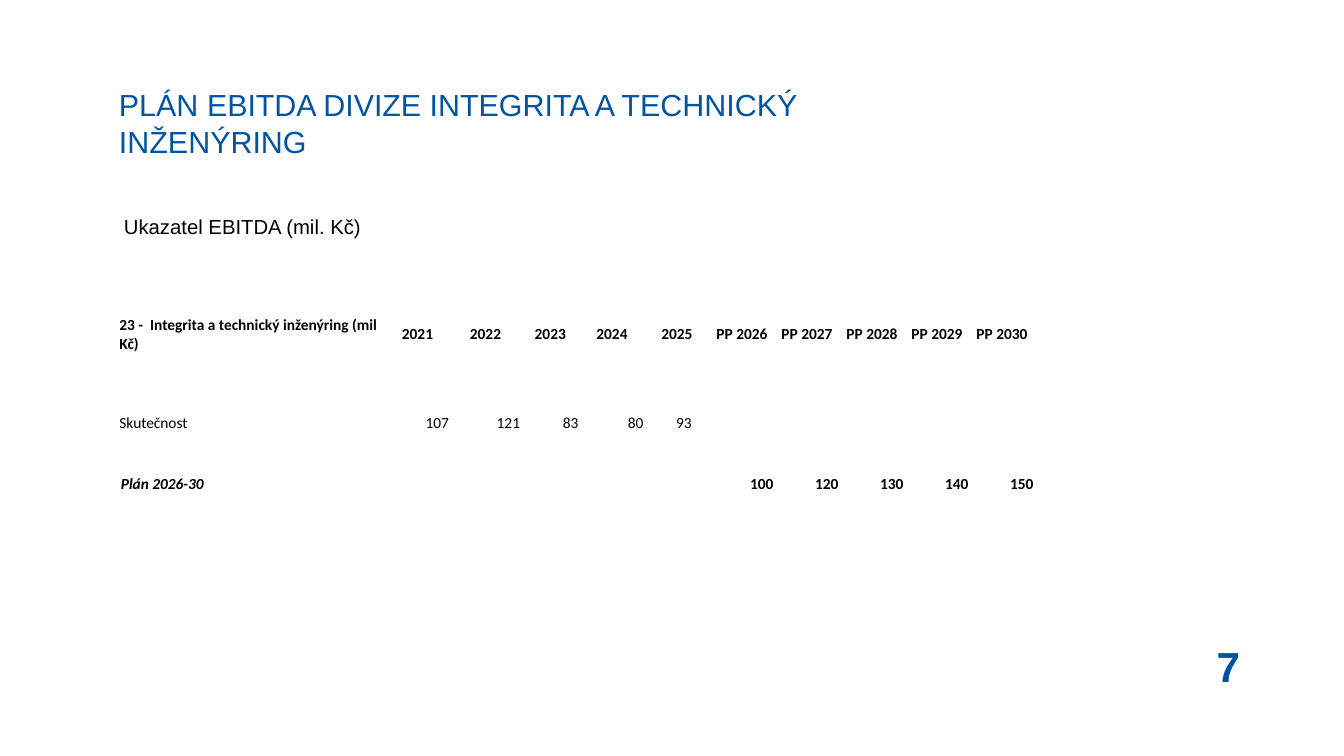
from dataclasses import dataclass

from pptx import Presentation
from pptx.dml.color import RGBColor
from pptx.enum.text import MSO_ANCHOR, MSO_AUTO_SIZE, PP_ALIGN
from pptx.util import Inches, Pt


@dataclass(frozen=True)
class Theme:
    heading_font: str = "Arial"
    table_font: str = "Calibri"
    title_color: str = "0054A4"
    number_color: str = "0053A0"
    text_color: str = "000000"
    title_size: float = 43.5
    caption_size: float = 29
    table_size: float = 22
    number_size: float = 60


class SlideBuilder:
    def __init__(self, slide, theme):
        self.slide = slide
        self.theme = theme

    def run(self, p, text, font, size, color, bold=False, italic=False, spacing=0):
        r = p.add_run()
        r.text = text
        r.font.name = font
        r.font.size = Pt(size)
        r.font.color.rgb = RGBColor.from_string(color)
        r.font.bold = bold
        r.font.italic = italic
        if spacing:
            r.font._element.set("spc", str(round(spacing * 100)))

    def title(self, parts, left, top, width, height):
        sp = self.slide.shapes.title
        sp.left, sp.top = Inches(left), Inches(top)
        sp.width, sp.height = Inches(width), Inches(height)
        tf = sp.text_frame
        tf.word_wrap = True
        tf.auto_size = MSO_AUTO_SIZE.NONE
        tf.vertical_anchor = MSO_ANCHOR.MIDDLE
        tf.margin_left = tf.margin_right = tf.margin_top = tf.margin_bottom = 0
        p = tf.paragraphs[0]
        p.alignment = PP_ALIGN.LEFT
        t = self.theme
        for text, spacing in parts:
            self.run(p, text, t.heading_font, t.title_size, t.title_color, spacing=spacing)

    def text(self, text, left, top, width, height, size, color,
             bold=False, align=PP_ALIGN.LEFT):
        sp = self.slide.shapes.add_textbox(
            Inches(left), Inches(top), Inches(width), Inches(height))
        tf = sp.text_frame
        tf.word_wrap = True
        p = tf.paragraphs[0]
        p.alignment = align
        self.run(p, text, self.theme.heading_font, size, color, bold)

    def table(self, left, top, col_widths, row_heights):
        table = self.slide.shapes.add_table(
            len(row_heights), len(col_widths), Inches(left), Inches(top),
            Inches(sum(col_widths)), Inches(sum(row_heights))).table
        table.first_row = table.horz_banding = False
        for column, width in zip(table.columns, col_widths):
            column.width = Inches(width)
        for row, height in zip(table.rows, row_heights):
            row.height = Inches(height)
        for cell in table.iter_cells():
            cell.fill.background()
        return table

    def cell(self, cell, parts, align, bold=False, italic=False, indent=0.01, margin=0.01):
        cell.vertical_anchor = MSO_ANCHOR.MIDDLE
        cell.margin_left = Inches(indent)
        cell.margin_right = cell.margin_top = Inches(margin)
        cell.margin_bottom = 0
        p = cell.text_frame.paragraphs[0]
        p.alignment = align
        t = self.theme
        for text, spacing in parts:
            self.run(p, text, t.table_font, t.table_size, t.text_color, bold, italic, spacing)


def main():
    prs = Presentation()
    prs.slide_width, prs.slide_height = Inches(26.67), Inches(15)
    theme = Theme()
    s = SlideBuilder(prs.slides.add_slide(prs.slide_layouts[5]), theme)
    left = 2.36

    # Title, page number and caption
    s.title([("PLÁN ", 0), ("EBITDA DIVIZE ", -0.1),
             ("INTEGRITA A TECHNICKÝ INŽENÝRING", 0)], left, 1.65, 17.14, 1.57)
    s.text("7", 23.35, 12.65, 2.05, 0.95, theme.number_size, theme.number_color,
           bold=True, align=PP_ALIGN.CENTER)
    s.text("Ukazatel EBITDA (mil. Kč)", left, 4.2, 15.28, 0.59,
           theme.caption_size, theme.text_color)

    # EBITDA table: actual years first, then planned years
    actual = {"2021": 107, "2022": 121, "2023": 83, "2024": 80, "2025": 93}
    plan = {"PP 2026": 100, "PP 2027": 120, "PP 2028": 130, "PP 2029": 140, "PP 2030": 150}
    table = s.table(left, 5.49, [5.28, 1.29, 1.41, 1.16] + [1.29] * 7, [2.29, 1.21, 1.21])

    # Row labels
    s.cell(table.cell(0, 0), [("23 -  Integrita a technický inženýring (mil Kč)", 0)],
           PP_ALIGN.LEFT, bold=True)
    s.cell(table.cell(1, 0), [("Skutečnost", 0)], PP_ALIGN.LEFT)
    s.cell(table.cell(2, 0), [("Plán", -0.1), (" 2026-30", 0)], PP_ALIGN.LEFT,
           bold=True, italic=True, indent=0.04)

    # Year headings and values
    for col, (year, value) in enumerate((actual | plan).items(), start=1):
        s.cell(table.cell(0, col), [(year, 0)], PP_ALIGN.CENTER, bold=True)
        planned = year in plan
        value_cell = table.cell(2 if planned else 1, col)
        if year == "2025":
            s.cell(value_cell, [(str(value), 0)], PP_ALIGN.CENTER, indent=0.28)
        else:
            s.cell(value_cell, [(str(value), 0)], PP_ALIGN.RIGHT, bold=planned,
                   indent=0.02, margin=0.02)

    prs.save("out.pptx")


if __name__ == "__main__":
    main()
